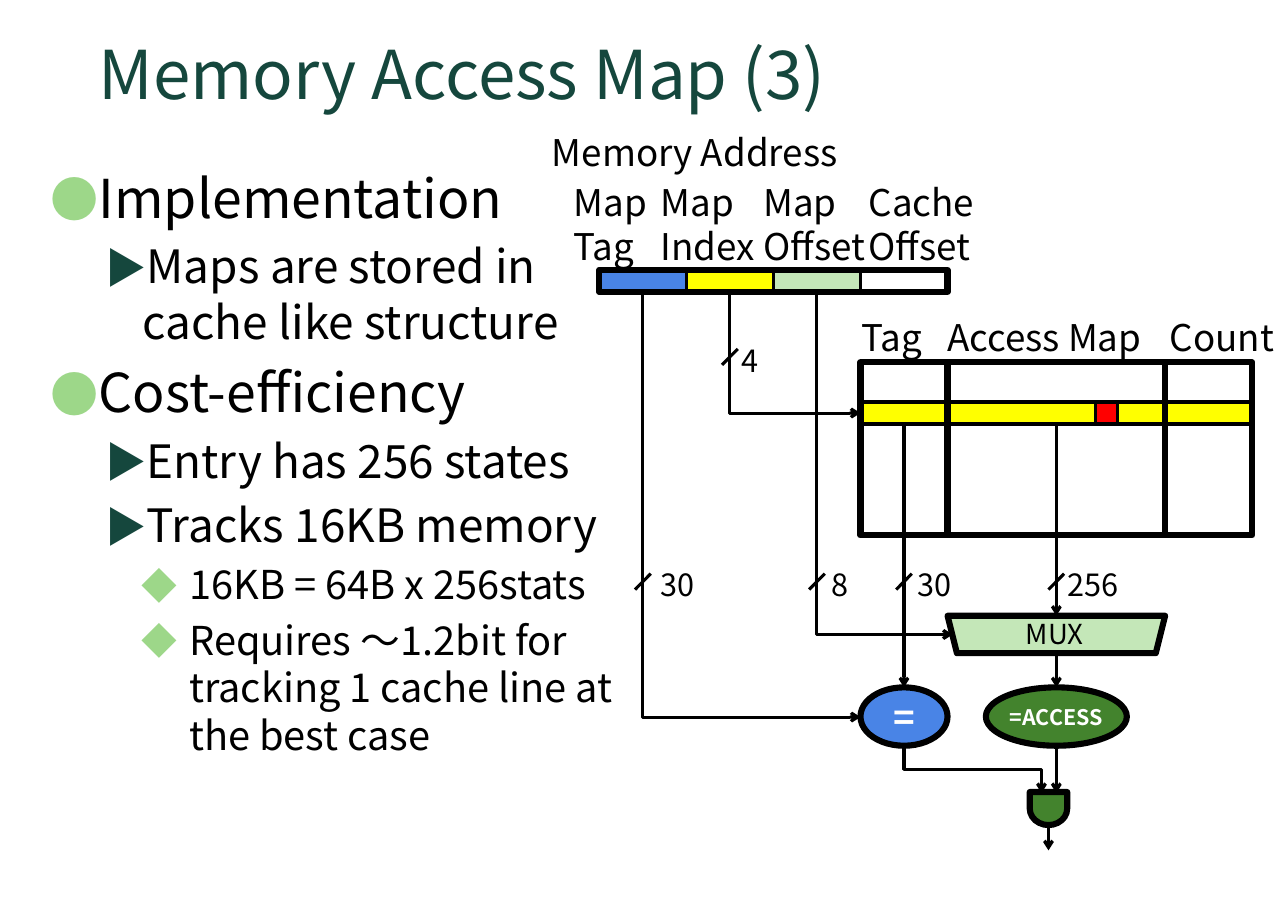
import pptx
import pptx.dml.color
import pptx.enum.shapes
import pptx.enum.text
import pptx.oxml
import pptx.oxml.ns
import pptx.util

W, H = 11.69, 8.27
LEFT, TOP = 5.44, 2.45  # upper left corner of the address register
COL, ROW = 0.79, 0.2    # one address field

FONT = "Noto Sans CJK JP"
COLORS = {
    "title": "15473D", "text": "000000", "white": "FFFFFF", "bullet": "9DD789",
    "tag": "4984E6", "index": "FFFF00", "offset": "C4E7B8",
    "hit": "FF0000", "gate": "43832D",
}
LEVELS = [
    {"size": 35, "left": 0.43, "hang": 0.41, "char": "●", "color": "bullet"},
    {"size": 30, "left": 0.86, "hang": 0.34, "char": "▶", "color": "title"},
    {"size": 26, "left": 1.28, "hang": 0.43, "char": "◆", "color": "bullet"},
]
BODY = [
    (0, "Implementation"),
    (1, "Maps are stored in cache like structure"),
    (0, "Cost-efficiency"),
    (1, "Entry has 256 states"),
    (1, "Tracks 16KB memory"),
    (2, "16KB = 64B x 256stats"),
    (2, "Requires ～1.2bit for tracking 1 cache line at the best case"),
]
# column, row, width in columns, text
LABELS = [
    (-0.67, -6.6, 4.67, "Memory Address"),
    (-0.42, -4.35, 1.15, "Map\nTag"),
    (0.58, -4.35, 1.4, "Map\nIndex"),
    (1.76, -4.35, 1.5, "Map\nOffset"),
    (2.97, -4.35, 1.55, "Cache\nOffset"),
    (2.89, 1.8, 1.2, "Tag"),
    (3.87, 1.8, 2.65, "Access Map"),
    (6.43, 1.8, 1.52, "Count"),
]
# column, row, gap before the number, bits
BUSES = [
    (0.5, 14.15, 0.2, "30"), (1.5, 3.95, 0.13, "4"), (2.5, 14.15, 0.17, "8"),
    (3.5, 14.15, 0.15, "30"), (5.25, 14.15, 0.13, "256"),
]
MSO = pptx.enum.shapes.MSO_SHAPE
LINK = pptx.enum.shapes.MSO_CONNECTOR
ANCHOR = pptx.enum.text.MSO_ANCHOR
ALIGN = pptx.enum.text.PP_ALIGN


def rgb(name):
    return pptx.dml.color.RGBColor.from_string(COLORS[name])


def x(col):
    return pptx.util.Inches(LEFT + col * COL)


def y(row):
    return pptx.util.Inches(TOP + row * ROW)


def box(col, row, cols, rows):
    """Left, top, width and height of a block of grid cells."""
    return x(col), y(row), x(col + cols) - x(col), y(row + rows) - y(row)


def add_xml(parent, tag, **attrs):
    el = pptx.oxml.parse_xml(f"<a:{tag} {pptx.oxml.ns.nsdecls('a')}/>")
    for key, value in attrs.items():
        el.set(key, str(value))
    parent.append(el)
    return el


def apply(obj, values):
    for key, value in values.items():
        setattr(obj, key, value)


def format_font(font, size, color="text", bold=False):
    apply(font, {"name": FONT, "size": pptx.util.Pt(size), "bold": bold})
    font.color.rgb = rgb(color)


def write(sp, text, size, color="text", bold=False, align=ALIGN.LEFT,
          anchor=ANCHOR.TOP, inset=0.0):
    tf = sp.text_frame
    margins = ("margin_left", "margin_right", "margin_top", "margin_bottom")
    apply(tf, {"word_wrap": True, "vertical_anchor": anchor})
    apply(tf, dict(zip(margins, [pptx.util.Inches(i) for i in (inset, inset, inset / 2, inset / 2)])))
    tf.text = text
    for p in tf.paragraphs:
        p.alignment = align
        format_font(p.font, size, color, bold)


def place(sp, left, top, width, height):
    """Place by shares of the slide's size."""
    apply(sp, {"left": pptx.util.Inches(left * W), "top": pptx.util.Inches(top * H),
               "width": pptx.util.Inches(width * W), "height": pptx.util.Inches(height * H)})


def add_title(s):
    place(s.shapes.title, 0.067, 0.027, 0.867, 0.105)
    write(s.shapes.title, "Memory Access Map (3)", 44, "title", anchor=ANCHOR.MIDDLE, inset=0.11)


def add_body(s):
    sp = s.placeholders[1]
    place(sp, 0.028, 0.174, 0.48, 0.718)
    write(sp, "\n".join(text for _, text in BODY), 30, inset=0.11)
    sp.text_frame.auto_size = pptx.enum.text.MSO_AUTO_SIZE.NONE
    for i, (p, (level, _)) in enumerate(zip(sp.text_frame.paragraphs, BODY)):
        f = LEVELS[level]
        p.level = level
        p.space_before = pptx.util.Pt(f["size"] * 0.2 if i else 0)
        pPr = p._p.get_or_add_pPr()
        pPr.set("marL", str(pptx.util.Inches(f["left"])))
        pPr.set("indent", str(-pptx.util.Inches(f["hang"])))
        run_defaults = pPr.find(pptx.oxml.ns.qn("a:defRPr"))
        if run_defaults is not None:
            pPr.remove(run_defaults)
        add_xml(add_xml(pPr, "buClr"), "srgbClr", val=COLORS[f["color"]])
        add_xml(pPr, "buSzPct", val=90000)
        add_xml(pPr, "buFont", typeface=FONT)
        add_xml(pPr, "buChar", char=f["char"])
        format_font(p.font, f["size"])


def add_block(s, cells, fill=None, line=2, kind=MSO.RECTANGLE):
    sp = s.shapes.add_shape(kind, *box(*cells))
    sp.shadow.inherit = False
    if fill:
        sp.fill.solid()
        sp.fill.fore_color.rgb = rgb(fill)
    else:
        sp.fill.background()
    sp.line.color.rgb = rgb("text")
    sp.line.width = pptx.util.Pt(line)
    return sp


def add_label(s, cells, text, size, **style):
    write(s.shapes.add_textbox(*box(*cells)), text, size, **style)


def style_line(c, arrow):
    c.line.color.rgb = rgb("text")
    c.line.width = pptx.util.Pt(2)
    spPr = c._element.spPr
    if arrow:
        add_xml(spPr.find(pptx.oxml.ns.qn("a:ln")), "tailEnd", type="arrow")
    add_xml(spPr, "effectLst")


def add_line(s, c1, r1, c2, r2, arrow=True, source=None):
    c = s.shapes.add_connector(LINK.STRAIGHT, x(c1), y(r1), x(c2), y(r2))
    if source is not None:
        c.begin_connect(source, 2)
    style_line(c, arrow)


def add_elbow(s, c1, r1, c2, r2, preset="bentConnector2"):
    """Arrow that leaves downwards: a mirrored elbow turned by 270 degrees."""
    mid_x, mid_y = (x(c1) + x(c2)) // 2, (y(r1) + y(r2)) // 2
    dx, dy = (x(c2) - x(c1)) // 2, (y(r2) - y(r1)) // 2
    c = s.shapes.add_connector(LINK.ELBOW, mid_x - dy, mid_y - dx, mid_x + dy, mid_y + dx)
    spPr = c._element.spPr
    spPr.find(pptx.oxml.ns.qn("a:prstGeom")).set("prst", preset)
    spPr.xfrm.set("rot", "16200000")
    spPr.xfrm.set("flipH", "1")
    style_line(c, True)


def add_bus(s, col, row, gap, bits):
    add_line(s, col - 0.09, row + 0.36, col + 0.09, row - 0.36, arrow=False)
    add_label(s, (col + gap, row - 0.7, 0.86, 1.7), bits, 20)


def add_address(s):
    for col, fill in enumerate(("tag", "index", "offset", "white")):
        add_block(s, (col, 0, 1, 1), fill)
    add_block(s, (0, 0, 4, 1), line=4)


def add_map_table(s):
    """Draw the table and return its selected tag and map cells."""
    columns = [(3, 1), (4, 2.5), (6.5, 1)]
    tag, states, _ = [add_block(s, (col, 6, cols, 1), "index") for col, cols in columns]
    add_block(s, (5.7, 6, 0.25, 1), "hit")
    for col, cols in columns:
        add_block(s, (col, 4.2, cols, 7.85), line=4)
    return tag, states


def add_logic(s):
    mux = add_block(s, (4, 15.7, 2.5, 1.7), "offset", 4, MSO.TRAPEZOID)
    mux._element.spPr.xfrm.set("flipV", "1")
    add_label(s, (4.52, 15.75, 1.42, 1.5), "MUX", 18, align=ALIGN.CENTER)
    for cells, fill, text, size in (((3, 18.95, 1, 2.65), "tag", "=", 24),
                                    ((4.44, 18.95, 1.62, 2.65), "gate", "=ACCESS", 14)):
        sp = add_block(s, cells, fill, 4, MSO.OVAL)
        write(sp, text, size, "white", True, ALIGN.CENTER, ANCHOR.MIDDLE)
    gate = add_block(s, (4.97, 23.6, 0.38, 1.7), "gate", 4, MSO.FLOWCHART_DELAY)
    gate.rotation = 90


def add_wires(s, tag, states):
    add_elbow(s, 0.5, 1, 3, 20.3)
    add_elbow(s, 1.5, 1, 3, 6.5)
    add_elbow(s, 2.5, 1, 4.06, 16.55)
    add_elbow(s, 3.5, 21.6, 5.08, 23.75, "bentConnector3")
    add_line(s, 3.5, 7, 3.5, 18.95, source=tag)
    add_line(s, 5.25, 7, 5.25, 15.7, source=states)
    add_line(s, 5.25, 17.4, 5.25, 18.95)
    add_line(s, 5.25, 21.6, 5.25, 23.75)
    add_line(s, 5.16, 25.2, 5.16, 26.35)


def main():
    prs = pptx.Presentation()
    prs.slide_width, prs.slide_height = pptx.util.Inches(W), pptx.util.Inches(H)
    s = prs.slides.add_slide(prs.slide_layouts[1])
    add_title(s)
    add_body(s)
    add_address(s)
    tag, states = add_map_table(s)
    add_logic(s)
    add_wires(s, tag, states)
    for bus in BUSES:
        add_bus(s, *bus)
    for col, row, cols, text in LABELS:
        add_label(s, (col, row, cols, 4.5 if "\n" in text else 2.5), text, 24, inset=0.1)
    prs.save("out.pptx")


if __name__ == "__main__":
    main()
